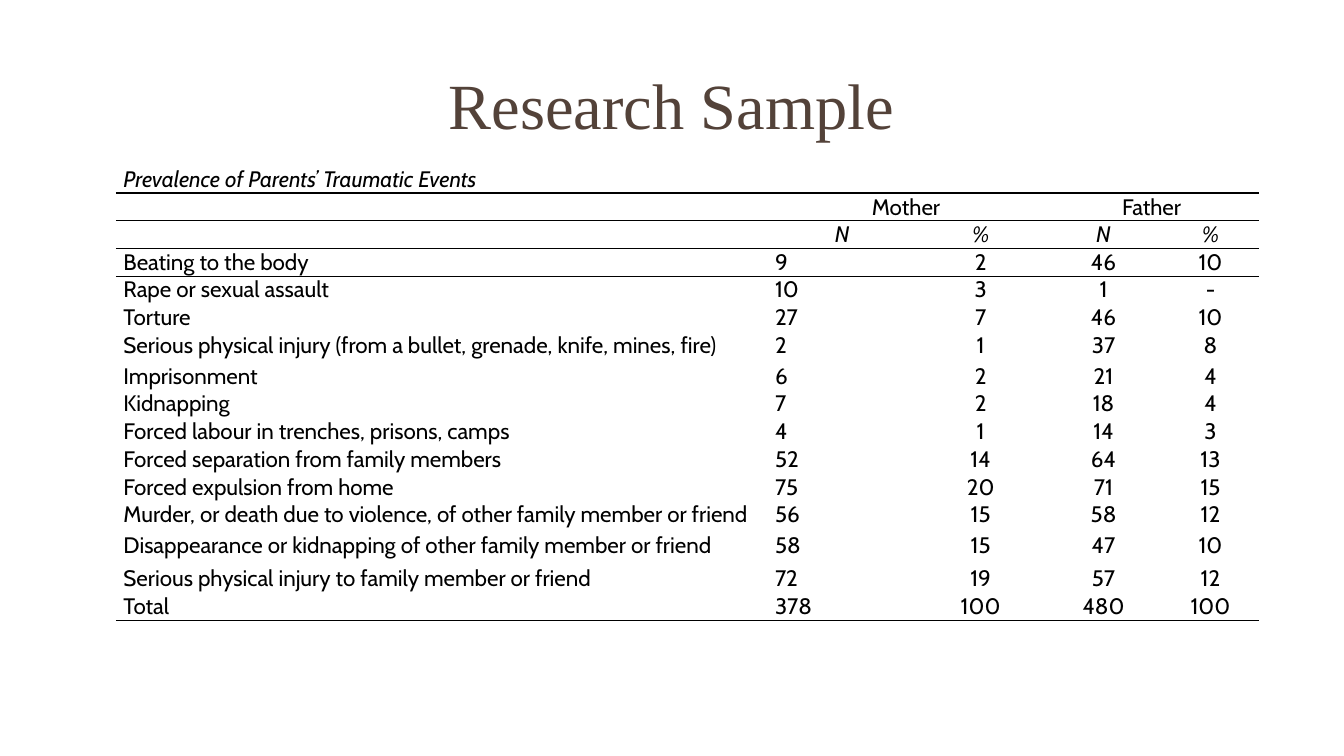
from lxml import etree
from pptx import Presentation
from pptx.dml.color import RGBColor
from pptx.enum import text as t
from pptx.oxml import ns
from pptx.util import Pt

COLORS = {"title": "534239", "ink": "000000", "paper": "FFFFFF"}
BODY_FONT, BODY_SIZE = "Cabin", 16
PLAIN_TABLE_STYLE = "{2D5ABB26-0587-4C30-8999-92F81FD0307C}"

COLUMN_WIDTHS = [465.4, 106.6, 91.4, 84.2, 68.6]
ROW_HEIGHT = 19.83
TALL_ROWS = {6: 22.1, 12: 21.6, 13: 23.9}
# Ruled row -> first column of the line below it
RULES = {0: 0, 1: 1, 2: 0, 15: 0}

HEADER = [
    ["Prevalence of Parents’ Traumatic Events", "", "", "", ""],
    ["", "Mother", "", "Father", ""],
    ["", "N", "%", "N", "%"],
]
EVENTS = [
    ["Beating to the body", "9", "2", "46", "10"],
    ["Rape or sexual assault", "10", "3", "1", "-"],
    ["Torture", "27", "7", "46", "10"],
    ["Serious physical injury (from a bullet, grenade, knife, mines, fire)",
     "2", "1", "37", "8"],
    ["Imprisonment", "6", "2", "21", "4"],
    ["Kidnapping", "7", "2", "18", "4"],
    ["Forced labour in trenches, prisons, camps", "4", "1", "14", "3"],
    ["Forced separation from family members", "52", "14", "64", "13"],
    ["Forced expulsion from home", "75", "20", "71", "15"],
    ["Murder, or death due to violence, of other family member or friend",
     "56", "15", "58", "12"],
    ["Disappearance or kidnapping of other family member or friend",
     "58", "15", "47", "10"],
    ["Serious physical injury to family member or friend",
     "72", "19", "57", "12"],
    ["Total", "378", "100", "480", "100"],
]


def write(frame, text, font=BODY_FONT, size=BODY_SIZE, color="ink",
          italic=False, centered=False):
    para = frame.paragraphs[0]
    para.alignment = t.PP_ALIGN.CENTER if centered else t.PP_ALIGN.LEFT
    if not text:
        # An empty cell keeps the body size, so its row does not grow
        etree.SubElement(para._p, ns.qn("a:endParaRPr"), sz=str(size * 100))
        return
    span = para.add_run()
    span.text = text
    span.font.name, span.font.size, span.font.italic = font, Pt(size), italic
    span.font.color.rgb = RGBColor.from_string(COLORS[color])


def add_rule(cell, side):
    line = etree.Element(ns.qn(f"a:ln{side}"), w=str(Pt(1)))
    fill = etree.SubElement(line, ns.qn("a:solidFill"))
    etree.SubElement(fill, ns.qn("a:srgbClr"), val=COLORS["ink"])
    cell._tc.get_or_add_tcPr().insert(0, line)


def fill_cell(cell, text, row, column):
    cell.margin_left = cell.margin_right = Pt(5.4)
    cell.margin_top = cell.margin_bottom = 0
    at_bottom = row < 2 or (row == 2 and column == 1)
    cell.vertical_anchor = (t.MSO_ANCHOR.BOTTOM if at_bottom
                            else t.MSO_ANCHOR.TOP)
    cell.fill.solid()
    cell.fill.fore_color.rgb = RGBColor.from_string(COLORS["paper"])
    in_header = row < len(HEADER)
    write(cell.text_frame, text, italic=row in (0, 2),
          centered=column > 1 or (in_header and column == 1))
    # Each insert goes first, so the bottom line is added before the top one
    if column >= RULES.get(row, len(COLUMN_WIDTHS)):
        add_rule(cell, "B")
    if column >= RULES.get(row - 1, len(COLUMN_WIDTHS)):
        add_rule(cell, "T")


def add_title(page, text):
    box = page.shapes.add_textbox(Pt(95.8), Pt(39.6), Pt(767.5), Pt(68.4))
    frame = box.text_frame
    frame.word_wrap = True
    frame.vertical_anchor = t.MSO_ANCHOR.MIDDLE
    write(frame, text, font="Times New Roman", size=46, color="title",
          centered=True)


def add_event_table(page, rows):
    heights = [TALL_ROWS.get(i, ROW_HEIGHT) for i in range(len(rows))]
    holder = page.shapes.add_table(len(rows), len(COLUMN_WIDTHS), Pt(82.8),
                                   Pt(118.1), Pt(sum(COLUMN_WIDTHS)),
                                   Pt(sum(heights)))
    table = holder.table
    table.first_row = table.horz_banding = False
    table._tbl.tblPr.find(ns.qn("a:tableStyleId")).text = PLAIN_TABLE_STYLE
    for column, width in zip(table.columns, COLUMN_WIDTHS):
        column.width = Pt(width)
    for i, values in enumerate(rows):
        table.rows[i].height = Pt(heights[i])
        for j, value in enumerate(values):
            fill_cell(table.cell(i, j), value, i, j)
    # Caption across the table, one heading over each pair of columns
    for row, first, last in [(0, 0, 4), (1, 1, 2), (1, 3, 4)]:
        table.cell(row, first).merge(table.cell(row, last))


def main():
    deck = Presentation()
    deck.slide_width, deck.slide_height = Pt(960), Pt(540)
    page = deck.slides.add_slide(deck.slide_layouts[6])
    add_title(page, "Research Sample")
    add_event_table(page, HEADER + EVENTS)
    deck.save("out.pptx")


if __name__ == "__main__":
    main()
